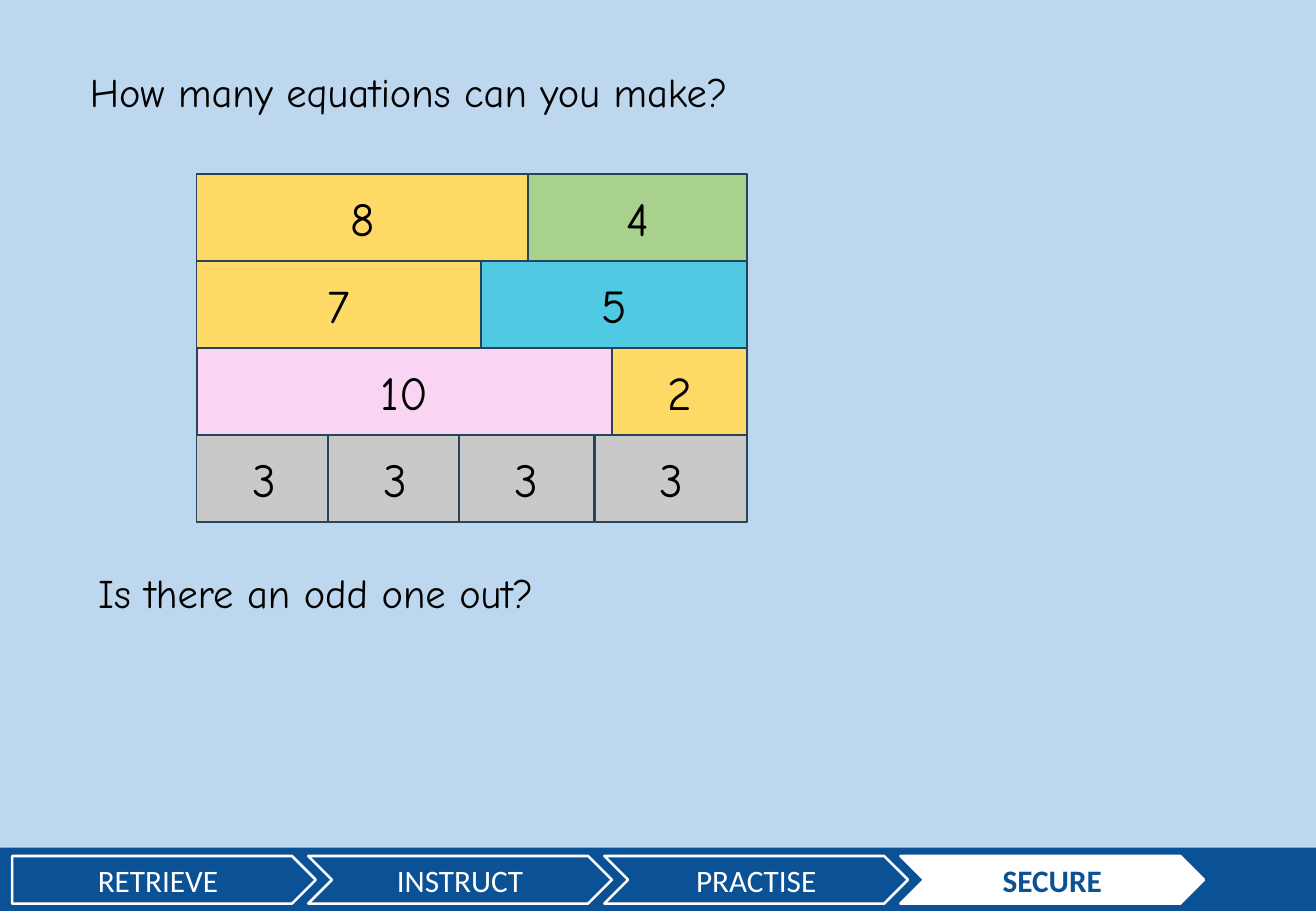
from dataclasses import dataclass

import pptx
import pptx.dml.color
import pptx.enum.shapes
import pptx.enum.text
import pptx.util

Pt = pptx.util.Pt
Kind = pptx.enum.shapes.MSO_SHAPE
Align = pptx.enum.text.PP_ALIGN
Anchor = pptx.enum.text.MSO_ANCHOR

NAVY, WHITE, BLACK, EDGE = "0B5196", "FFFFFF", "000000", "28445D"
GOLD, GREEN, CYAN, PINK, GREY = "FFD966", "A9D18E", "50CAE2", "FAD4F3", "C9C9C9"
HAND = "Comic Neue"


@dataclass
class Bar:
    text: str
    left: float
    width: float
    fill: str


@dataclass
class Stage:
    text: str
    kind: int = Kind.CHEVRON
    fill: str = NAVY
    ink: str = WHITE
    bold: bool = False


def paint(target, code: str) -> None:
    """Set a fill or a font to one solid colour."""
    if hasattr(target, "solid"):
        target.solid()
        target.fore_color.rgb = pptx.dml.color.RGBColor.from_string(code)
    else:
        target.color.rgb = pptx.dml.color.RGBColor.from_string(code)


def write(shape, text: str, *, font: str = HAND, size: float = 24, ink: str = BLACK,
          bold: bool = False, align=Align.LEFT, anchor=Anchor.TOP) -> None:
    frame = shape.text_frame
    frame.word_wrap = True
    frame.auto_size = pptx.enum.text.MSO_AUTO_SIZE.NONE
    frame.vertical_anchor = anchor
    para = frame.paragraphs[0]
    para.alignment = align
    run = para.add_run()
    run.text = text
    run.font.name = font
    run.font.size = Pt(size)
    run.font.bold = bold
    paint(run.font, ink)


def draw(slide, kind: int, left: float, top: float, width: float, height: float,
         fill: str, edge: str = "", weight: float = 1):
    shape = slide.shapes.add_shape(kind, Pt(left), Pt(top), Pt(width), Pt(height))
    shape.shadow.inherit = False
    paint(shape.fill, fill)
    if edge:
        paint(shape.line.fill, edge)
        shape.line.width = Pt(weight)
    else:
        shape.line.fill.background()
    return shape


ROWS = [
    [Bar("8", 116.6, 196.6, GOLD), Bar("4", 313.2, 129.6, GREEN)],
    [Bar("7", 116.6, 168.5, GOLD), Bar("5", 285.1, 157.7, CYAN)],
    [Bar("10", 116.6, 246.3, PINK), Bar("2", 362.9, 79.9, GOLD)],
    [Bar("3", 116.6 + 77.8 * i, 80, GREY) for i in range(3)]
    + [Bar("3", 352.6, 90.2, GREY)],
]
STAGES = [
    Stage("RETRIEVE", kind=Kind.PENTAGON),
    Stage("INSTRUCT"),
    Stage("PRACTISE"),
    Stage("SECURE", fill=WHITE, ink=NAVY, bold=True),
]


def main() -> None:
    deck = pptx.Presentation()
    deck.slide_width, deck.slide_height = Pt(780), Pt(540)
    slide = deck.slides.add_slide(deck.slide_layouts[5])
    paint(slide.background.fill, "BDD7EE")

    # Lesson stages along the foot
    draw(slide, Kind.RECTANGLE, 0, 502.5, 780, 37.5, NAVY)
    for i, stage in enumerate(STAGES):
        shape = draw(slide, stage.kind, 7.2 + 175.5 * i, 507.4, 180, 28.2,
                     stage.fill, WHITE, 1.5)
        write(shape, stage.text, font="Calibri", size=18.5, ink=stage.ink,
              bold=stage.bold, align=Align.CENTER, anchor=Anchor.MIDDLE)

    # Number bars, each row adding up to twelve
    for i, row in enumerate(ROWS):
        for bar in row:
            shape = draw(slide, Kind.RECTANGLE, bar.left, 103 + 51.6 * i,
                         bar.width, 51.6, bar.fill, EDGE)
            write(shape, bar.text, size=28, align=Align.CENTER, anchor=Anchor.MIDDLE)

    # Questions above and below the bars
    title = slide.shapes.title
    title.left, title.top = Pt(46.1), Pt(36)
    title.width, title.height = Pt(406.8), Pt(65.5)
    write(title, "How many equations can you make?")
    box = slide.shapes.add_textbox(Pt(51.1), Pt(333.4), Pt(293.8), Pt(65.5))
    write(box, "Is there an odd one out?")

    deck.save("out.pptx")


if __name__ == "__main__":
    main()
